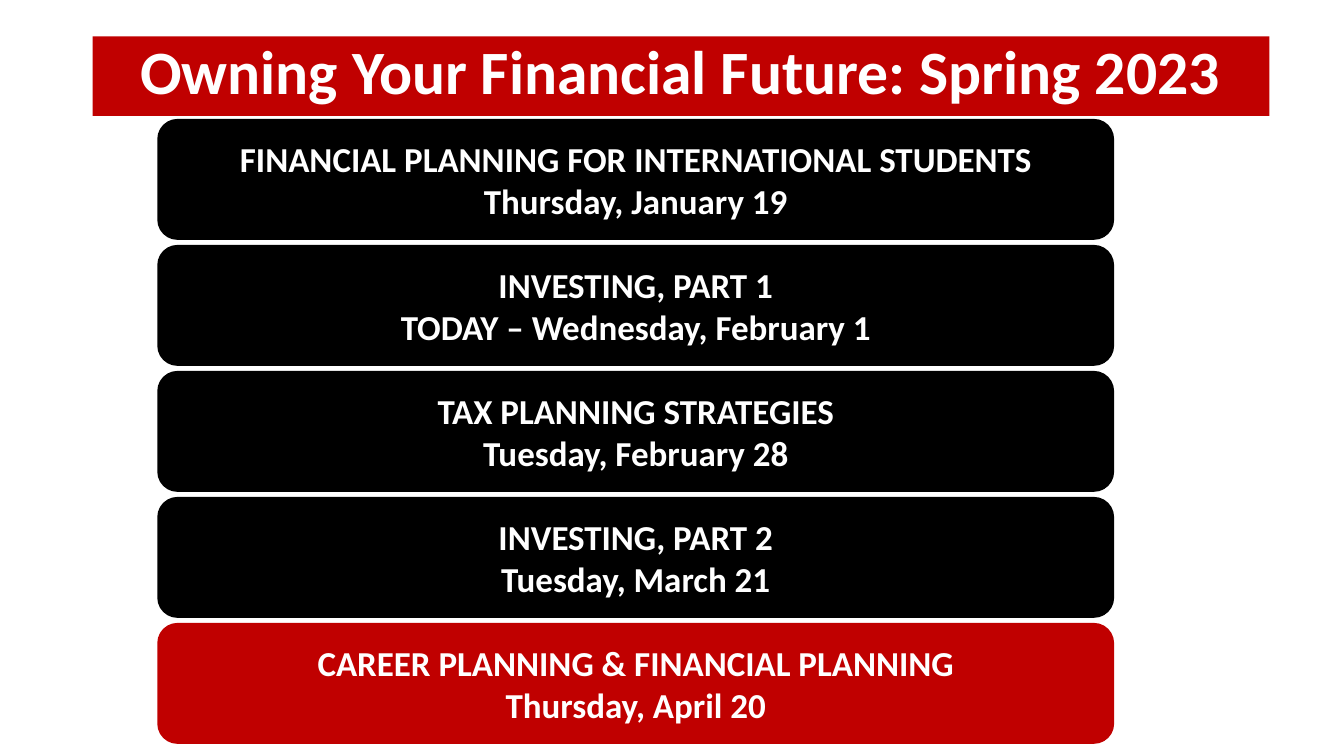
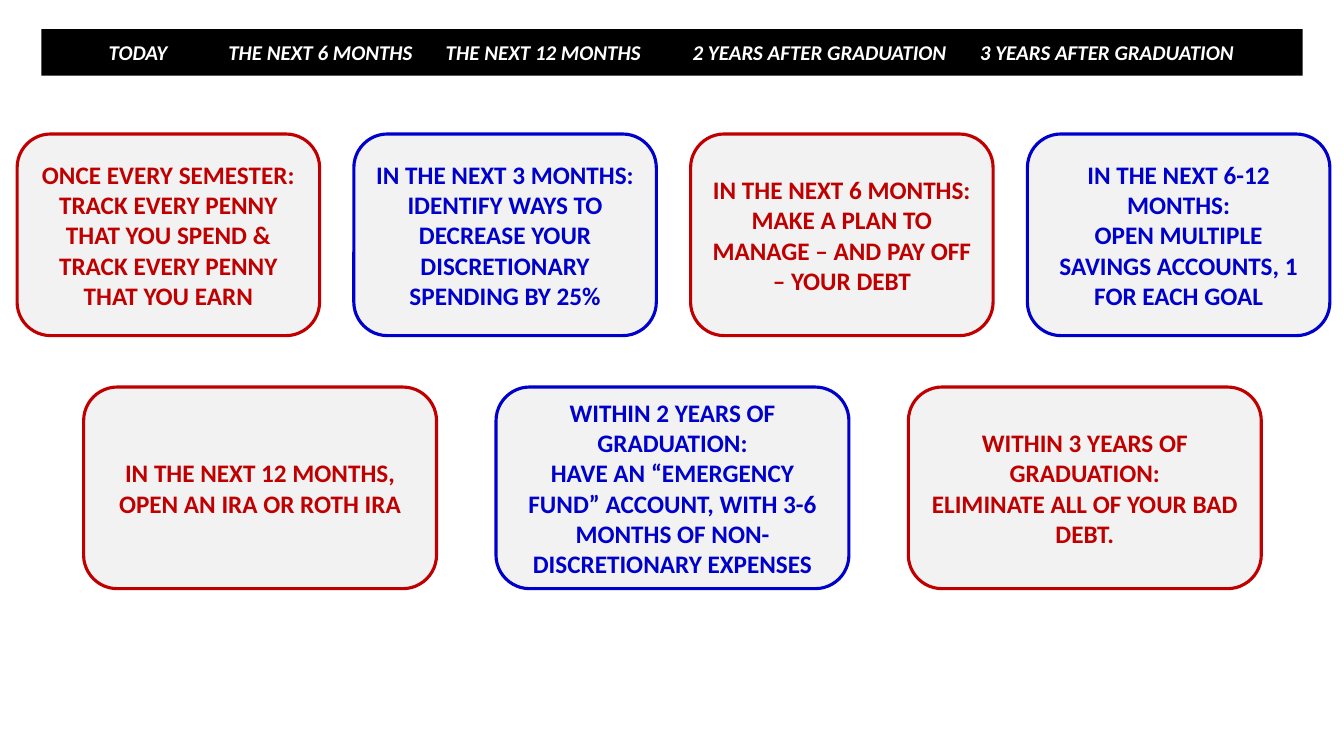
"""Build two slides on student financial planning."""
from pptx import Presentation
from pptx.dml.color import RGBColor
from pptx.enum.shapes import MSO_SHAPE as Shape
from pptx.enum.text import MSO_ANCHOR as Anchor, PP_ALIGN as Align
from pptx.oxml.ns import qn
from pptx.util import Inches, Pt
from lxml.etree import SubElement as Sub

RED, BLUE, BLACK, WHITE, GREY = "C00000", "0000CC", "000000", "FFFFFF", "F2F2F2"
BASE = {"name": "Calibri", "bold": True}
TITLE = BASE | {"size": Pt(44)}
EVENT = BASE | {"size": Pt(25)}
TIMES = BASE | {"size": Pt(15), "italic": True}
GOAL = BASE | {"size": Pt(18)}

EVENTS = [
    ("FINANCIAL PLANNING FOR INTERNATIONAL STUDENTS", "Thursday, January 19"),
    ("INVESTING, PART 1", "TODAY – Wednesday, February 1"),
    ("TAX PLANNING STRATEGIES", "Tuesday, February 28"),
    ("INVESTING, PART 2", "Tuesday, March 21"),
    ("CAREER PLANNING & FINANCIAL PLANNING", "Thursday, April 20"),
]
STEPS = [
    ("TODAY", 0.86),
    ("THE NEXT 6 MONTHS", 2.67),
    ("THE NEXT 12 MONTHS", 4.88),
    ("2 YEARS AFTER GRADUATION", 7.62),
    ("3 YEARS AFTER GRADUATION", 10.47),
]
SOON = [
    ("ONCE EVERY SEMESTER:",
     "TRACK EVERY PENNY THAT YOU SPEND & TRACK EVERY PENNY THAT YOU EARN"),
    ("IN THE NEXT 3 MONTHS:",
     "IDENTIFY WAYS TO DECREASE YOUR DISCRETIONARY SPENDING BY 25%"),
    ("IN THE NEXT 6 MONTHS:",
     "MAKE A PLAN TO MANAGE – AND PAY OFF – YOUR DEBT"),
    ("IN THE NEXT 6-12 MONTHS:",
     "OPEN MULTIPLE SAVINGS ACCOUNTS, 1 FOR EACH GOAL"),
]
LATER = [
    ("IN THE NEXT 12 MONTHS, OPEN AN IRA OR ROTH IRA",),
    ("WITHIN 2 YEARS OF GRADUATION:",
     "HAVE AN “EMERGENCY FUND” ACCOUNT, WITH 3-6 MONTHS OF "
     "NON-DISCRETIONARY EXPENSES"),
    ("WITHIN 3 YEARS OF GRADUATION:", "ELIMINATE ALL OF YOUR BAD DEBT."),
]


def paint(part, color):
    """Give a fill a solid colour."""
    part.solid()
    part.fore_color.rgb = RGBColor.from_string(color)


def write(para, text, style, color):
    """Fill a centred paragraph with styled text."""
    para.text = text
    para.alignment = Align.CENTER
    for key, value in style.items():
        setattr(para.font, key, value)
    para.font.color.rgb = RGBColor.from_string(color)


def box(slide, kind, at, fill, lines, style, color=WHITE, edge=None):
    """Add a filled shape with one paragraph per line."""
    shape = slide.shapes.add_shape(kind, *map(Inches, at))
    shape.shadow.inherit = False
    paint(shape.fill, fill)
    if edge:
        paint(shape.line.fill, edge)
        shape.line.width = Pt(2.25)
    else:
        shape.line.fill.background()
    frame = shape.text_frame
    frame.word_wrap = True
    frame.vertical_anchor = Anchor.MIDDLE
    for i, text in enumerate(lines):
        para = frame.add_paragraph() if i else frame.paragraphs[0]
        write(para, text, style, color)
    return frame


def band(slide, at, fill, text, style):
    """Add a full band with one line of white text."""
    return box(slide, Shape.RECTANGLE, at, fill, [text], style)


def stops(para, places):
    """Centre the tabbed labels of a paragraph on the given places."""
    para.alignment = Align.LEFT
    props = para._p.get_or_add_pPr()
    tabs = Sub(props, qn("a:tabLst"))
    props.insert(0, tabs)
    for place in places:
        Sub(tabs, qn("a:tab"), pos=str(Inches(place)), algn="ctr")


def goals(slide, rows, left, top, width, step):
    """Add a row of goal cards in alternating colours."""
    for i, lines in enumerate(rows):
        color = BLUE if i % 2 else RED
        at = (left + i * step, top, width, 2)
        box(slide, Shape.ROUNDED_RECTANGLE, at, GREY, lines, GOAL, color, color)


def dates(slide):
    """Draw the list of spring events."""
    head = band(slide, (0.92, 0.36, 11.67, 0.79), RED,
                "Owning Your Financial Future: Spring 2023", TITLE)
    head.vertical_anchor = Anchor.TOP
    head.paragraphs[0].line_spacing = 0.9
    for i, lines in enumerate(EVENTS):
        fill = RED if lines is EVENTS[-1] else BLACK
        at = (1.56, 1.18 + i * 1.25, 9.49, 1.2)
        box(slide, Shape.ROUNDED_RECTANGLE, at, fill, lines, EVENT)


def plan(slide):
    """Draw the timeline band and the goal cards."""
    labels, places = zip(*STEPS)
    text = "".join("\t" + label for label in labels)
    line = band(slide, (0.41, 0.29, 12.51, 0.46), BLACK, text, TIMES)
    stops(line.paragraphs[0], places)
    goals(slide, SOON, 0.17, 1.33, 3, 3.34)
    goals(slide, LATER, 0.83, 3.84, 3.5, 4.09)


def main():
    """Build and save the deck."""
    deck = Presentation()
    deck.slide_width, deck.slide_height = Inches(13.33), Inches(7.5)
    for draw in (dates, plan):
        draw(deck.slides.add_slide(deck.slide_layouts[6]))
    deck.save("out.pptx")


if __name__ == "__main__":
    main()
